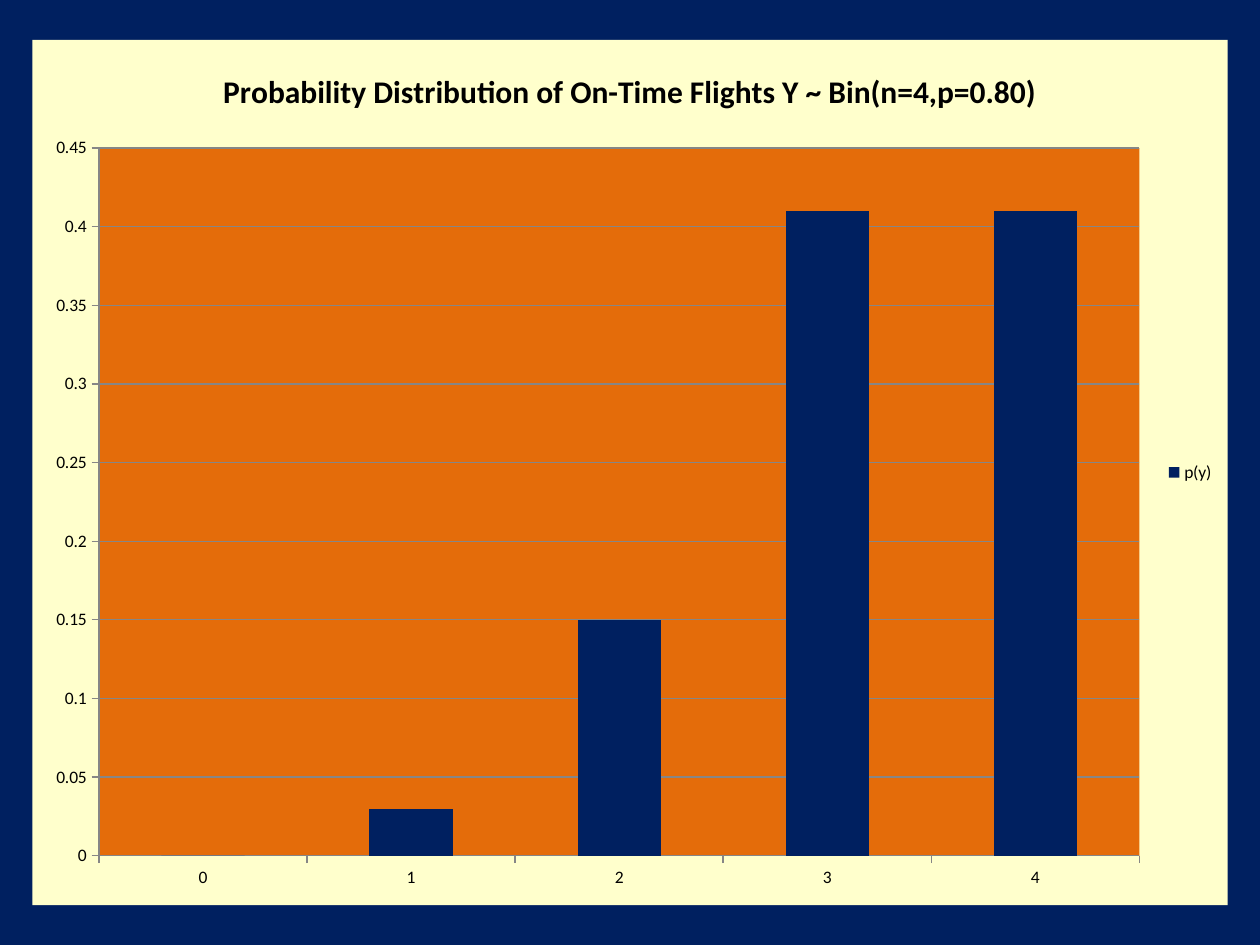
from dataclasses import dataclass

from pptx import Presentation, oxml
from pptx.chart import data
from pptx.dml import color
from pptx.enum import chart as chart_enum
from pptx.oxml import ns
from pptx.util import Pt


@dataclass
class Theme:
    navy: str = "002060"
    cream: str = "FFFFCC"
    orange: str = "E46C0A"
    gray: str = "868686"
    black: str = "000000"
    font: str = "Calibri"
    title_size: int = 18
    label_size: int = 10


theme = Theme()


def write_text(frame, content, *, size, bold=False, fill=theme.black):
    run = frame.paragraphs[0].add_run()
    run.text = content
    run.font.name = theme.font
    run.font.size = Pt(size)
    run.font.bold = bold
    run.font.color.rgb = color.RGBColor.from_string(fill)


def area_properties(fill):
    return oxml.parse_xml(
        f'<c:spPr {ns.nsdecls("c", "a")}><a:solidFill><a:srgbClr val="{fill}"/>'
        "</a:solidFill><a:ln><a:noFill/></a:ln></c:spPr>"
    )


presentation = Presentation()
presentation.slide_width = Pt(720)
presentation.slide_height = Pt(540)
slide = presentation.slides.add_slide(presentation.slide_layouts[6])
slide.background.fill.solid()
slide.background.fill.fore_color.rgb = color.RGBColor.from_string(theme.navy)

distribution = data.CategoryChartData()
distribution.categories = ["0", "1", "2", "3", "4"]
distribution.add_series("p(y)", [0, 0.03, 0.15, 0.41, 0.41])
chart = slide.shapes.add_chart(
    chart_enum.XL_CHART_TYPE.COLUMN_CLUSTERED,
    Pt(18.5), Pt(22.75), Pt(683), Pt(494.5), distribution,
).chart
chart.font.name = theme.font
chart.font.size = Pt(theme.label_size)
chart.font.color.rgb = color.RGBColor.from_string(theme.black)

chart.has_title = True
chart.chart_title.include_in_layout = False
write_text(
    chart.chart_title.text_frame,
    "Probability Distribution of On-Time Flights Y ~ Bin(n=4,p=0.80)",
    size=theme.title_size,
    bold=True,
)

chart.has_legend = True
chart.legend.position = chart_enum.XL_LEGEND_POSITION.RIGHT
chart.legend.include_in_layout = False

plot = chart.plots[0]
plot.gap_width = 150
plot.vary_by_categories = False
columns = plot.series[0]
columns.format.fill.solid()
columns.format.fill.fore_color.rgb = color.RGBColor.from_string(theme.navy)

value_axis = chart.value_axis
value_axis.minimum_scale = 0
value_axis.maximum_scale = 0.45
value_axis.major_unit = 0.05
value_axis.has_major_gridlines = True
value_axis.tick_labels.number_format = "General"
value_axis.tick_labels.number_format_is_linked = False

for axis in (chart.category_axis, value_axis):
    axis.major_tick_mark = chart_enum.XL_TICK_MARK.OUTSIDE
    axis.minor_tick_mark = chart_enum.XL_TICK_MARK.NONE

for guide in (chart.category_axis, value_axis, value_axis.major_gridlines):
    guide.format.line.width = Pt(0.75)
    guide.format.line.color.rgb = color.RGBColor.from_string(theme.gray)

chart_space = chart.element
chart_space.chart.addnext(area_properties(theme.cream))
chart_space.chart.plotArea.append(area_properties(theme.orange))

presentation.save("out.pptx")
